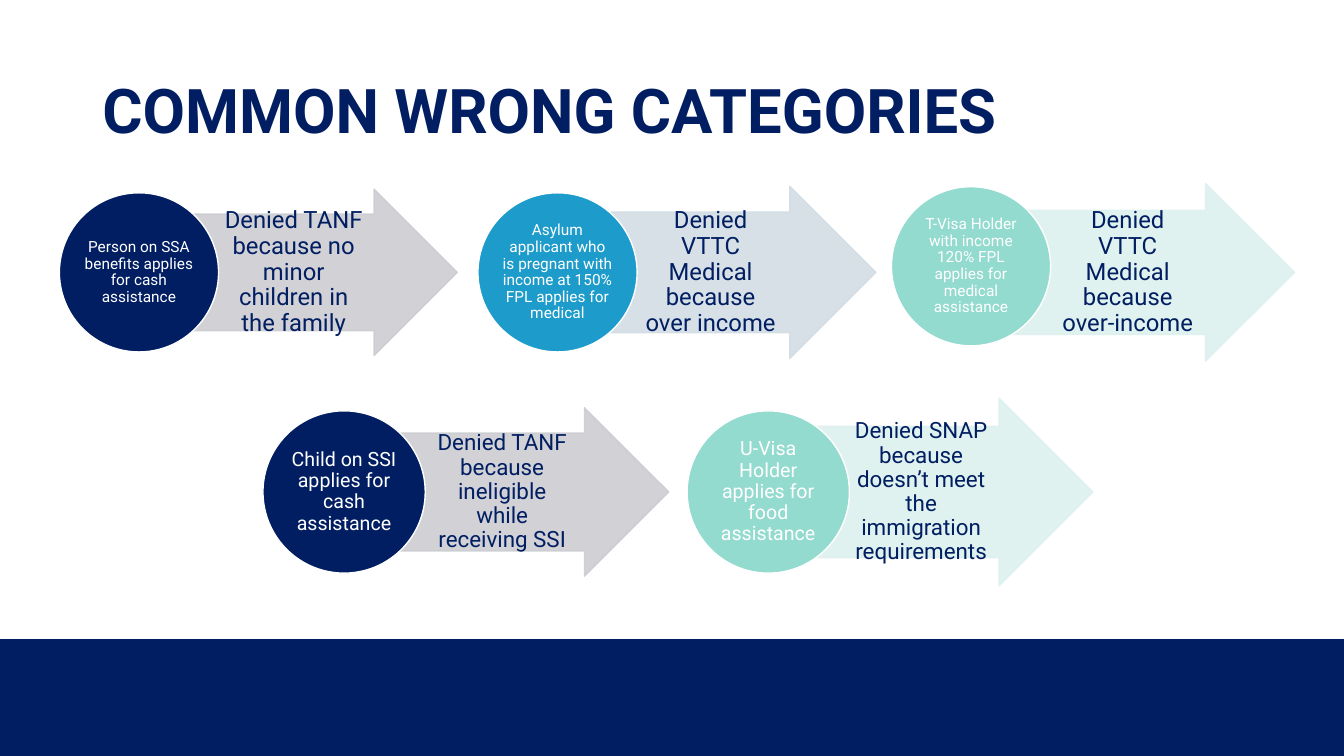
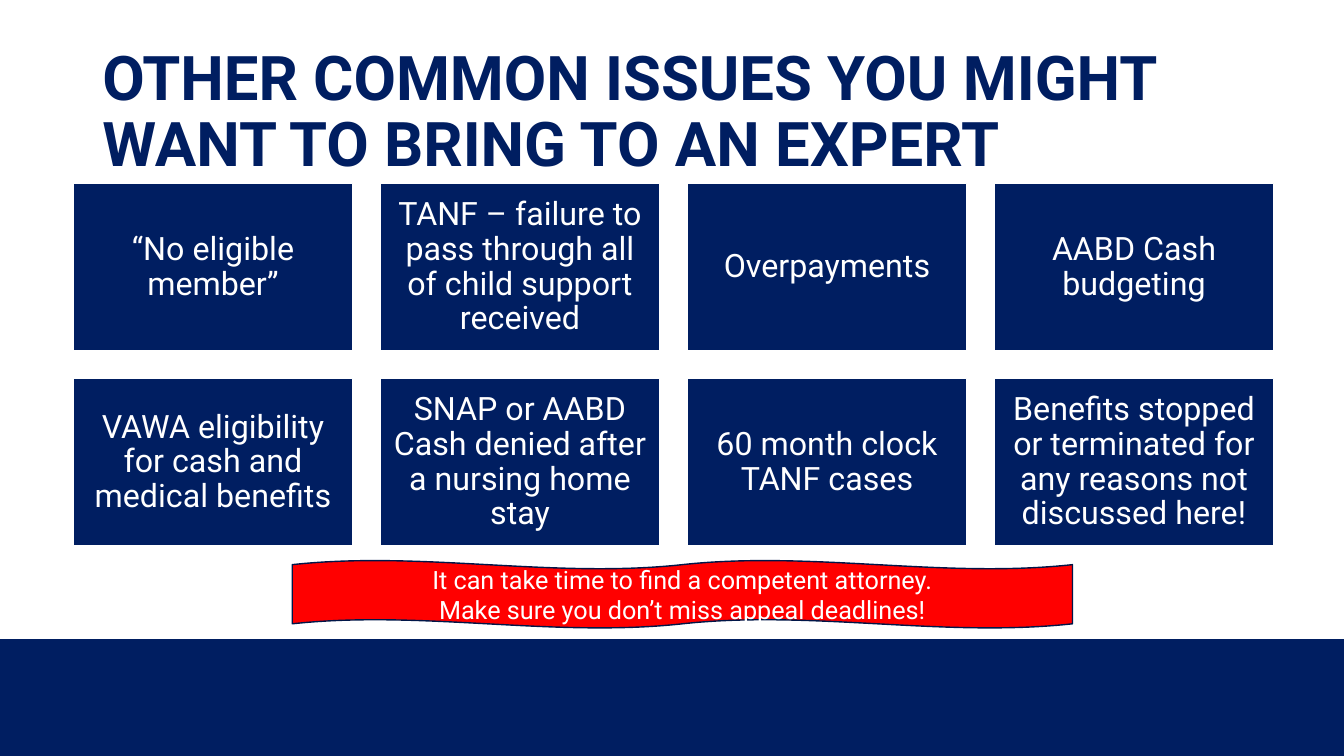
from dataclasses import dataclass
from itertools import product

from lxml.etree import SubElement
from pptx import Presentation
from pptx.dml.color import RGBColor as Rgb
from pptx.enum.shapes import MSO_SHAPE as Kind
from pptx.enum.text import MSO_ANCHOR as Anchor, PP_ALIGN as Align
from pptx.oxml.ns import qn
from pptx.util import Inches, Pt

WIDE, HIGH = 13.33, 7.5
COLS, ROWS = 64, 36


@dataclass(frozen=True)
class Theme:
    font: str = "Roboto"
    navy: str = "001E61"
    blue: str = "1D9BCA"
    mint: str = "93DACF"
    gray: str = "CCCDD2"
    mist: str = "D2DDE4"
    foam: str = "DDF1EE"
    red: str = "FF0000"
    edge: str = "001648"
    white: str = "FFFFFF"
    title: int = 44
    tile: int = 23
    note: int = 18


@dataclass(frozen=True)
class Box:
    """Left, top, width and height in grid columns and rows."""
    x: float
    y: float
    w: float
    h: float

    def place(self):
        return across(self.x), down(self.y), across(self.w), down(self.h)


T = Theme()
BAND = Box(0, 30.43, COLS, 5.57)
TITLE = Box(4.4, 1.92, 55.2, 6.96)
TILES = Box(3.5, 8.74, 57.16, 17.26)
WAVE = Box(13.92, 26.69, 37.15, 3.22)


def across(cols):
    return Inches(WIDE * cols / COLS)


def down(rows):
    return Inches(HIGH * rows / ROWS)


def write(shape, text, size, color=T.white, bold=False, align=Align.CENTER,
          pads=(0.1, 0.05, 0.1, 0.05), pitch=0.9):
    """Fill a shape with text; pads are left, top, right, bottom in inches."""
    frame = shape.text_frame
    frame.word_wrap = True
    frame.vertical_anchor = Anchor.MIDDLE
    (frame.margin_left, frame.margin_top,
     frame.margin_right, frame.margin_bottom) = map(Inches, pads)
    frame.text = text
    for para in frame.paragraphs:
        para.alignment = align
        para.line_spacing = pitch
        font = para.font
        font.name, font.size, font.bold = T.font, Pt(size), bold
        font.color.rgb = Rgb.from_string(color)


def draw(slide, kind, box, fill, line=None, alpha=None):
    shape = slide.shapes.add_shape(kind, *box.place())
    shape.shadow.inherit = False
    shape.fill.solid()
    shape.fill.fore_color.rgb = Rgb.from_string(fill)
    if line:
        shape.line.color.rgb = Rgb.from_string(line)
        shape.line.width = Pt(1)
    else:
        shape.line.fill.background()
    if alpha:
        for tint in shape._element.spPr.iter(qn("a:srgbClr")):
            SubElement(tint, qn("a:alpha")).set("val", str(alpha * 1000))
    return shape


def start(deck, title):
    """Add a slide with the title and bottom band that all slides share."""
    slide = deck.slides.add_slide(deck.slide_layouts[6])
    draw(slide, Kind.RECTANGLE, BAND, T.navy)
    head = slide.shapes.add_textbox(*TITLE.place())
    write(head, title, T.title, T.navy, bold=True, align=Align.LEFT)
    return slide


def case(slide, box, who, why, dark, pale, sizes, shift=(0, 0)):
    """Draw a circle over the tail of an arrow; the box bounds both."""
    ball = box.w / 2.5
    arrow = Box(box.x + ball / 2, box.y, 2 * ball, box.h)
    shape = draw(slide, Kind.RIGHT_ARROW, arrow, pale, pale, alpha=90)
    shape.adjustments[0] = 0.7
    # The label runs from the circle's edge to 0.35 heights before the tip;
    # the arrow's own text area ends 0.15 heights before it.
    left = across(ball / 2).inches + 0.05
    right = down(0.2 * box.h).inches + 0.02
    write(shape, why, sizes[1], T.navy, pads=(left, 0.01, right, 0.01))
    dx, dy = shift
    spot = Box(box.x + dx, box.y + (box.h - ball) / 2 + dy, ball, ball)
    circle = draw(slide, Kind.OVAL, spot, dark, T.white)
    write(circle, who, sizes[0], pads=(0.01,) * 4)


def chain(slide, left, mid, step, ball, sizes, cases):
    """Set cases at equal steps along the row centred on mid."""
    for i, (high, *parts) in enumerate(cases):
        box = Box(left + i * step, mid - high / 2, 2.5 * ball, high)
        case(slide, box, *parts[:4], sizes, *parts[4:])


def tiles(slide, box, texts, cols=4, rows=2, gap=1.32):
    wide = (box.w - gap * (cols - 1)) / cols
    high = (box.h - gap * (rows - 1)) / rows
    for (row, col), text in zip(product(range(rows), range(cols)), texts):
        cell = Box(box.x + col * (wide + gap), box.y + row * (high + gap),
                   wide, high)
        shape = draw(slide, Kind.RECTANGLE, cell, T.navy, T.white)
        write(shape, text, T.tile, pads=(0.1,) * 4)


def wrong(deck):
    slide = start(deck, "COMMON WRONG CATEGORIES")
    chain(slide, 2.83, 12.97, 19.93, 7.58, (11, 17), [
        (7.92, "Person on SSA benefits applies for cash assistance",
         "Denied TANF because no minor children in the family",
         T.navy, T.gray),
        (8.2, "Asylum applicant who is pregnant with income at 150% FPL "
         "applies for medical",
         "Denied VTTC Medical because over income", T.blue, T.mist),
        (8.45, "T-Visa Holder with income 120% FPL applies for medical "
         "assistance",
         "Denied VTTC Medical because over-income", T.mint, T.foam,
         (-0.24, -0.29)),
    ])
    chain(slide, 12.52, 23.43, 20.2, 7.73, (14, 16), [
        (8.02, "Child on SSI applies for cash assistance",
         "Denied TANF because ineligible while receiving SSI",
         T.navy, T.gray),
        (8.93, "U-Visa Holder applies for food assistance",
         "Denied SNAP because doesn’t meet the immigration requirements",
         T.mint, T.foam),
    ])


def issues(deck):
    slide = start(deck, "OTHER COMMON ISSUES YOU MIGHT WANT TO BRING "
                        "TO AN EXPERT")
    tiles(slide, TILES, [
        "“No eligible member”",
        "TANF – failure to pass through all of child support received",
        "Overpayments",
        "AABD Cash budgeting",
        "VAWA eligibility for cash and medical benefits",
        "SNAP or AABD Cash denied after a nursing home stay",
        "60 month clock TANF cases",
        "Benefits stopped or terminated for any reasons not discussed here!",
    ])
    wave = draw(slide, Kind.DOUBLE_WAVE, WAVE, T.red, T.edge)
    write(wave, "It can take time to find a competent attorney.\n"
          "Make sure you don’t miss appeal deadlines!", T.note, pitch=1.0)


def main():
    deck = Presentation()
    deck.slide_width, deck.slide_height = Inches(WIDE), Inches(HIGH)
    wrong(deck)
    issues(deck)
    deck.save("out.pptx")


if __name__ == "__main__":
    main()
